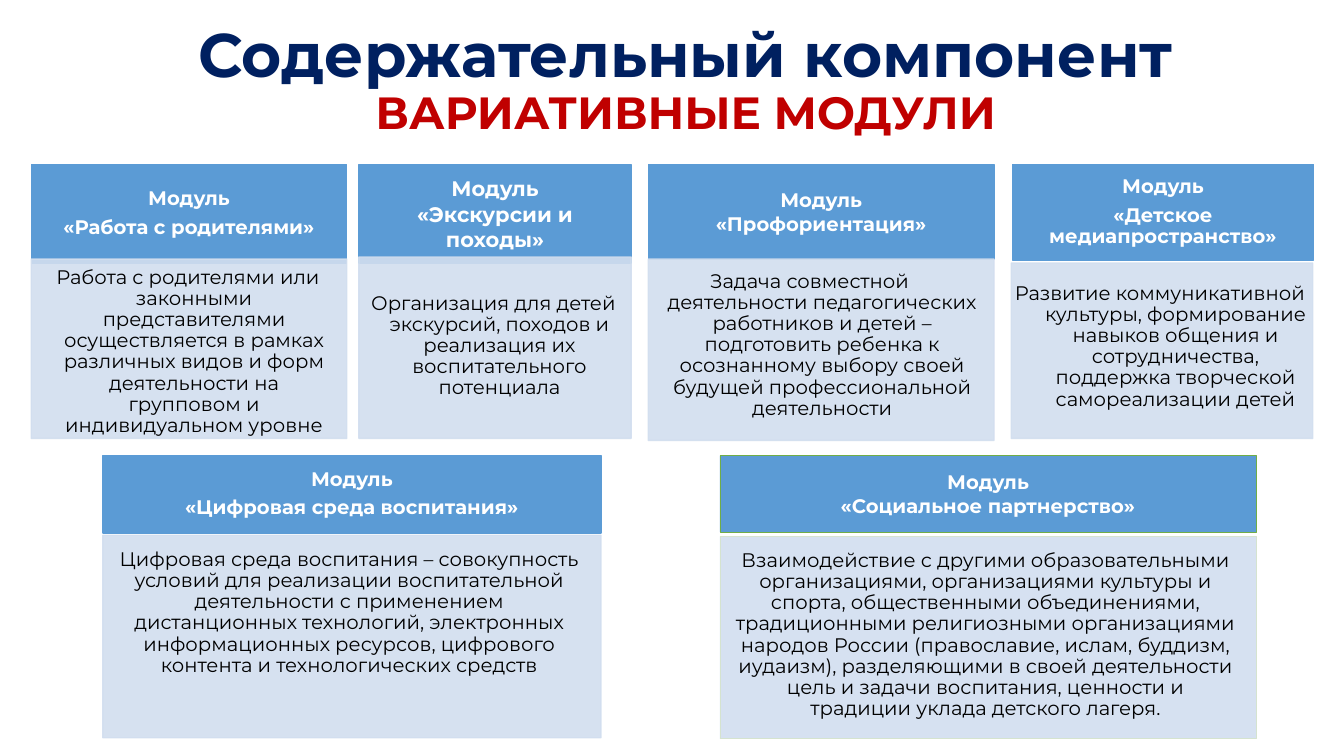
from lxml import etree
from pptx import Presentation
from pptx.dml.color import RGBColor
from pptx.enum.shapes import MSO_SHAPE
from pptx.enum.text import MSO_ANCHOR, PP_ALIGN
from pptx.oxml.ns import qn
from pptx.util import Inches, Pt

RECT = MSO_SHAPE.RECTANGLE
CENTER = PP_ALIGN.CENTER
TOP, MIDDLE = MSO_ANCHOR.TOP, MSO_ANCHOR.MIDDLE

FONT = "Montserrat"
NAVY = RGBColor(0x00, 0x20, 0x60)
RED = RGBColor(0xC0, 0x00, 0x00)
BLUE = RGBColor(0x5B, 0x9B, 0xD5)
PALE_BLUE = RGBColor(0xD2, 0xDE, 0xEF)
PARTNER_BLUE = RGBColor(0xD6, 0xE1, 0xF1)
GREEN = RGBColor(0x70, 0xAD, 0x47)
PALE_GREEN = RGBColor(0xD5, 0xE3, 0xCF)
WHITE = RGBColor(0xFF, 0xFF, 0xFF)
BLACK = RGBColor(0x00, 0x00, 0x00)

# Content: lengths in inches, insets as left, top, right, bottom
TITLE = [("Содержательный компонент", 43.9, NAVY),
         ("ВАРИАТИВНЫЕ МОДУЛИ", 32.2, RED)]
MODULE = "Модуль"
MODULES = [
    dict(name="«Работа с родителями»",
         task="Работа с родителями или законными представителями осуществляется "
              "в рамках различных видов и форм деятельности на групповом и "
              "индивидуальном уровне",
         head=(0.31, 1.63, 3.13, 0.98), body=(0.31, 2.57, 3.13, 1.78),
         head_inset=(0.1, 0.06), body_inset=(0.08, 0.08, 0.1, 0.11),
         hanging=0.12, spaced=True),
    dict(name="«Экскурсии и походы»",
         task="Организация для детей экскурсий, походов и реализация их "
              "воспитательного потенциала",
         head=(3.56, 1.63, 2.7, 0.98), body=(3.56, 2.55, 2.7, 1.8),
         head_inset=(0.12, 0.07), body_inset=(0.09, 0.36, 0.12, 0.13),
         hanging=0.12, name_size=15),
    dict(name="«Профориентация»",
         task="Задача совместной деятельности педагогических работников и детей – "
              "подготовить ребенка к осознанному выбору своей будущей "
              "профессиональной деятельности",
         head=(6.43, 1.63, 3.43, 0.94), body=(6.43, 2.57, 3.43, 1.8),
         head_inset=(0.16, 0.09), body_inset=(0.12, 0.12, 0.16, 0.17),
         hanging=0.25, task_area=(6.25, 2.57, 3.6, 1.8)),
    dict(name="«Детское медиапространство»",
         task="Развитие коммуникативной культуры, формирование навыков общения и "
              "сотрудничества, поддержка творческой самореализации детей",
         head=(10.04, 1.63, 2.99, 0.95), body=(10.03, 2.61, 2.99, 1.74),
         head_inset=(0.26, 0.15), body_inset=(0.2, 0.2, 0.26, 0.3),
         hanging=0.31, task_area=(9.82, 2.61, 3.43, 1.74), spaced=True),
    dict(name="«Цифровая среда воспитания»",
         task="Цифровая среда воспитания – совокупность условий для реализации "
              "воспитательной деятельности с применением дистанционных технологий, "
              "электронных информационных ресурсов, цифрового контента и "
              "технологических средств",
         head=(1.02, 4.52, 4.94, 0.77), body=(1.02, 5.31, 4.94, 2.01),
         head_inset=(0.19, 0.11), body_inset=(0.14, 0.14, 0.19, 0.21), spaced=True),
    dict(name="«Социальное партнерство»",
         task="Взаимодействие с другими образовательными организациями, "
              "организациями культуры и спорта, общественными объединениями, "
              "традиционными религиозными организациями народов России "
              "(православие, ислам, буддизм, иудаизм), разделяющими в своей "
              "деятельности цель и задачи воспитания, ценности и традиции уклада "
              "детского лагеря.",
         head=(7.14, 4.52, 5.32, 0.76), body=(7.14, 5.32, 5.32, 2.01),
         head_inset=(0.19, 0.11), body_inset=(0.14, 0.14, 0.19, 0.21),
         head_line=GREEN, body_fill=PARTNER_BLUE, body_line=PALE_GREEN),
]


def add_panel(slide, area, fill, line=None):
    panel = slide.shapes.add_shape(RECT, *map(Inches, area))
    panel.shadow.inherit = False
    panel.fill.solid()
    panel.fill.fore_color.rgb = fill
    panel.line.color.rgb = line or fill
    panel.line.width = Pt(0.5 if line else 1)
    return panel


def make_translucent(panel, percent):
    for color in panel._element.spPr.iter(qn("a:srgbClr")):
        etree.SubElement(color, qn("a:alpha"), val=str(percent * 1000))


def add_text_area(slide, area):
    return slide.shapes.add_textbox(*map(Inches, area))


def set_frame(shape, insets, anchor):
    frame = shape.text_frame
    frame.word_wrap = True
    frame.vertical_anchor = anchor
    (frame.margin_left, frame.margin_top,
     frame.margin_right, frame.margin_bottom) = map(Inches, insets)
    return frame


def write(frame, lines, size, color, bold, spacing, after, hanging=0):
    frame.text = "\n".join(lines)
    for paragraph in frame.paragraphs:
        paragraph.alignment = CENTER
        paragraph.line_spacing = spacing
        paragraph.space_after = Pt(after)
        font = paragraph.font
        font.name, font.size, font.bold = FONT, Pt(size), bold
        font.color.rgb = color
        if hanging:
            properties = paragraph._p.get_or_add_pPr()
            properties.set("marL", str(Inches(hanging)))
            properties.set("indent", str(-Inches(hanging)))


def add_title(slide):
    heading = add_text_area(slide, (0.27, 0.19, 13.06, 1.25))
    paragraph = set_frame(heading, (0.1, 0.05, 0.1, 0.05), MIDDLE).paragraphs[0]
    paragraph.alignment = CENTER
    paragraph.line_spacing = 0.9
    paragraph.font.name, paragraph.font.bold = FONT, True
    for number, (text, size, color) in enumerate(TITLE):
        if number:
            paragraph.add_line_break()
        run = paragraph.add_run()
        run.text = text
        run.font.size = Pt(size)
        run.font.color.rgb = color


def add_module(slide, module):
    # Header
    spaced = module.get("spaced")
    head = add_panel(slide, module["head"], BLUE, module.get("head_line"))
    write(set_frame(head, module["head_inset"] * 2, MIDDLE),
          [MODULE, module["name"]], module.get("name_size", 14), WHITE, True,
          0.9 if spaced else 1.0, 5 if spaced else 0)

    # Description
    body = add_panel(slide, module["body"], module.get("body_fill", PALE_BLUE),
                     module.get("body_line"))
    if "body_fill" not in module:
        make_translucent(body, 90)
    task = body
    if "task_area" in module:
        task = add_text_area(slide, module["task_area"])
    write(set_frame(task, module["body_inset"], TOP), [module["task"]],
          14, BLACK, False, 0.9, 2, module.get("hanging", 0))


def main():
    deck = Presentation()
    deck.slide_width, deck.slide_height = Inches(13.33), Inches(7.5)
    slide = deck.slides.add_slide(deck.slide_layouts[6])
    add_title(slide)
    for module in MODULES:
        add_module(slide, module)
    deck.save("out.pptx")


if __name__ == "__main__":
    main()
